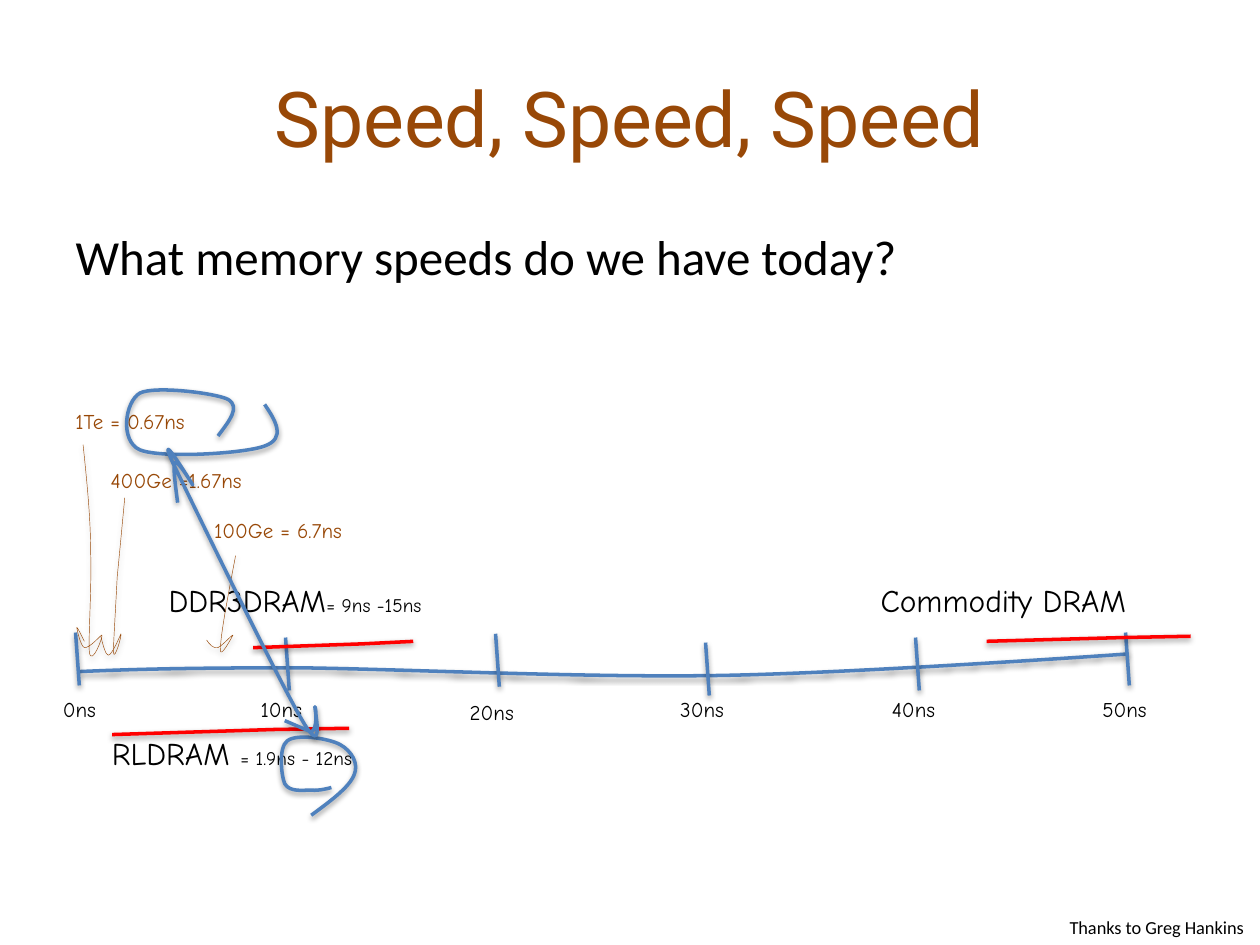
from dataclasses import dataclass

from lxml import etree
from pptx import Presentation
from pptx.dml.color import RGBColor
from pptx.enum.text import MSO_ANCHOR, MSO_AUTO_SIZE, PP_ALIGN
from pptx.oxml import parse_xml
from pptx.oxml.ns import nsdecls, qn
from pptx.util import Inches, Pt

CENTER = PP_ALIGN.CENTER
LEFT = PP_ALIGN.LEFT
MIDDLE = MSO_ANCHOR.MIDDLE
GROW = MSO_AUTO_SIZE.SHAPE_TO_FIT_TEXT
NO_FIT = MSO_AUTO_SIZE.NONE

CURVE_STEPS = 20
SHADOW = (
    f'<a:effectLst {nsdecls("a")}><a:outerShdw blurRad="40000" dist="20000" '
    'dir="5400000" rotWithShape="0"><a:srgbClr val="000000">'
    '<a:alpha val="38000"/></a:srgbClr></a:outerShdw></a:effectLst>'
)


@dataclass(frozen=True)
class Theme:
    ink: RGBColor = RGBColor.from_string("000000")
    brown: RGBColor = RGBColor.from_string("984807")
    blue: RGBColor = RGBColor.from_string("4F81BD")
    red: RGBColor = RGBColor.from_string("FF0000")
    title_font: str = "Roboto"
    body_font: str = "Calibri"
    sketch_font: str = "Comic Neue"
    title_size: float = 44
    body_size: float = 28
    memory_size: float = 18
    label_size: float = 12
    range_size: float = 11
    credit_size: float = 10.5
    stroke: float = 2
    hairline: float = 0.25


def segments(points):
    return [points[first:first + 3] for first in range(1, len(points), 3)]


def flatten(points):
    outline = [points[0]]
    for segment in segments(points):
        controls = (outline[-1], *segment)
        if len(segment) == 1:
            outline.append(segment[0])
            continue
        for step in range(1, CURVE_STEPS + 1):
            t = step / CURVE_STEPS
            weights = ((1 - t) ** 3, 3 * t * (1 - t) ** 2, 3 * t * t * (1 - t), t ** 3)
            outline.append(tuple(
                sum(weight * point[axis] for weight, point in zip(weights, controls))
                for axis in (0, 1)
            ))
    return outline


class SlideBuilder:
    def __init__(self, slide, theme):
        self.slide = slide
        self.theme = theme

    def format_font(self, font, name, size, color):
        for key, value in {"name": name, "size": Pt(size)}.items():
            setattr(font, key, value)
        font.color.rgb = color

    def place(self, box, left, top, width, height):
        bounds = {"left": left, "top": top, "width": width, "height": height}
        for key, value in bounds.items():
            setattr(box, key, Inches(value))

    def title(self, text, *bounds):
        box = self.slide.shapes.title
        self.place(box, *bounds)
        box.text_frame.vertical_anchor = MIDDLE
        para = box.text_frame.paragraphs[0]
        para.alignment = CENTER
        span = para.add_run()
        span.text = text
        self.format_font(span.font, self.theme.title_font, self.theme.title_size, self.theme.brown)

    def body(self, text, *bounds):
        box = self.slide.placeholders[1]
        self.place(box, *bounds)
        box.text_frame.auto_size = NO_FIT
        para = box.text_frame.paragraphs[0]
        para.alignment = LEFT
        para.space_before = Pt(0)
        properties = para._p.get_or_add_pPr()
        for key in ("marL", "indent"):
            properties.set(key, "0")
        etree.SubElement(properties, qn("a:buNone"))
        span = para.add_run()
        span.text = text
        self.format_font(span.font, self.theme.body_font, self.theme.body_size, self.theme.ink)

    def label(self, spans, left, top, width, height=0.3, color=None, font=None):
        box = self.slide.shapes.add_textbox(*map(Inches, (left, top, width, height)))
        for key, value in {"word_wrap": False, "auto_size": GROW}.items():
            setattr(box.text_frame, key, value)
        para = box.text_frame.paragraphs[0]
        for text, size in spans:
            span = para.add_run()
            span.text = text
            self.format_font(span.font, font or self.theme.sketch_font, size,
                             color or self.theme.ink)

    def stroke(self, points, color, width):
        corners = [(Inches(x), Inches(y)) for x, y in points]
        builder = self.slide.shapes.build_freeform(*corners[0])
        builder.add_line_segments(corners[1:], close=False)
        shape = builder.convert_to_shape()
        shape.fill.background()
        shape.line.color.rgb = color
        shape.line.width = Pt(width)
        shape._element.spPr.append(parse_xml(SHADOW))
        return shape

    def curve(self, points, color, width):
        shape = self.stroke(flatten(points), color, width)
        outline = next(shape._element.iter(qn("a:path")))
        for line in outline.findall(qn("a:lnTo")):
            outline.remove(line)
        for segment in segments(points):
            tag = "a:cubicBezTo" if len(segment) == 3 else "a:lnTo"
            command = etree.SubElement(outline, qn(tag))
            for x, y in segment:
                point = etree.SubElement(command, qn("a:pt"))
                point.set("x", str(Inches(x) - shape.left))
                point.set("y", str(Inches(y) - shape.top))


TICK_TOPS = (5.02, 5.06, 5.03, 5.1, 5.06, 5.02)
TICK_LABELS = (
    ("0ns", 0.4, 5.48, 0.51),
    ("10ns", 1.97, 5.48, 0.58),
    ("20ns", 3.63, 5.5, 0.64),
    ("30ns", 5.3, 5.48, 0.62),
    ("40ns", 6.98, 5.48, 0.61),
    ("50ns", 8.65, 5.48, 0.63),
)
MEMORY_LABELS = (
    ("Commodity DRAM", "", 6.89, 4.56, 2.6),
    ("DDR3DRAM", "= 9ns -15ns", 1.24, 4.56, 2.8),
    ("RLDRAM ", "= 1.9ns - 12ns", 0.79, 5.78, 2.69),
)
MEMORY_RANGES = (
    ((2.01, 5.14), (2.88, 5.11), (3.28, 5.09)),
    ((0.89, 5.83), (2.17, 5.79), (2.77, 5.78)),
    ((7.83, 5.09), (8.93, 5.06), (9.45, 5.05)),
)
LINK_LABELS = (
    ("100Ge = 6.7ns", 1.6, 4.06, 1.49),
    ("400Ge =1.67ns", 0.78, 3.66, 1.5),
    ("1Te = 0.67ns", 0.5, 3.19, 1.36),
)
TIME_AXIS = (
    (0.63, 5.33), (1.08, 5.31), (1.52, 5.3), (2.37, 5.3), (3.22, 5.31), (4.64, 5.38),
    (5.74, 5.36), (6.84, 5.34), (8.95, 5.19), (8.95, 5.19),
)
LINK_ARROWS = (
    ((0.66, 3.53), (0.69, 3.82), (0.72, 4.11), (0.72, 4.38), (0.73, 4.66), (0.7, 5.07),
     (0.71, 5.18), (0.73, 5.29), (0.82, 5.05), (0.81, 5.04), (0.81, 5.03), (0.71, 5.15),
     (0.67, 5.14), (0.64, 5.13), (0.61, 4.99), (0.61, 4.98), (0.61, 4.97), (0.64, 5.03),
     (0.67, 5.09)),
    ((0.99, 3.95), (0.97, 4.16), (0.95, 4.38), (0.93, 4.58), (0.92, 4.79), (0.9, 5.1),
     (0.9, 5.18), (0.91, 5.25), (0.97, 5.03), (0.96, 5.03), (0.96, 5.03), (0.89, 5.2),
     (0.86, 5.2), (0.84, 5.2), (0.82, 5.13), (0.8, 5.05)),
    ((1.87, 4.41), (1.81, 4.73), (1.75, 5.04), (1.75, 5.15), (1.74, 5.25), (1.85, 5.04),
     (1.85, 5.04), (1.84, 5.04), (1.76, 5.13), (1.73, 5.14), (1.69, 5.15), (1.66, 5.11),
     (1.64, 5.08)),
)
LINK_CIRCLE = (
    (1.73, 3.46), (1.82, 3.34), (1.91, 3.23), (1.81, 3.17), (1.71, 3.12), (1.23, 3.06),
    (1.11, 3.12), (0.99, 3.19), (0.95, 3.5), (1.11, 3.57), (1.28, 3.64), (1.94, 3.6),
    (2.1, 3.54), (2.27, 3.48), (2.19, 3.34), (2.1, 3.21),
)
MEMORY_CIRCLE = (
    (2.47, 6.47), (2.62, 6.36), (2.77, 6.25), (2.81, 6.15), (2.85, 6.06), (2.79, 5.96),
    (2.7, 5.91), (2.61, 5.86), (2.35, 5.82), (2.28, 5.88), (2.21, 5.93), (2.23, 6.15),
    (2.26, 6.22), (2.3, 6.29), (2.41, 6.27), (2.47, 6.27), (2.53, 6.28), (2.63, 6.25),
    (2.63, 6.25),
)
GAP_ARROW = (
    (1.41, 3.99), (1.39, 3.84), (1.37, 3.69), (1.39, 3.67), (1.41, 3.65), (1.53, 3.85),
    (1.53, 3.85), (1.53, 3.85), (1.23, 3.36), (1.37, 3.67), (1.52, 3.98), (2.21, 5.4),
    (2.4, 5.72), (2.59, 6.05), (2.49, 5.6), (2.5, 5.61), (2.51, 5.63), (2.52, 5.79),
    (2.47, 5.81), (2.26, 5.72),
)


def main():
    deck = Presentation()
    deck.slide_width, deck.slide_height = Inches(10), Inches(7.5)
    theme = Theme()
    page = SlideBuilder(deck.slides.add_slide(deck.slide_layouts[1]), theme)

    page.title("Speed, Speed, Speed", 0.5, 0.3, 9, 1.25)
    page.body("What memory speeds do we have today?", 0.5, 1.75, 9.5, 1.31)

    page.curve(TIME_AXIS, theme.blue, theme.stroke)
    for index, top in enumerate(TICK_TOPS):
        left = 0.6 + index * 5 / 3
        page.stroke(((left, top), (left + 0.03, top + 0.42)), theme.blue, theme.stroke)
    for text, *bounds in TICK_LABELS:
        page.label([(text, theme.label_size)], *bounds)

    for name, speed, *bounds in MEMORY_LABELS:
        spans = [(name, theme.memory_size)]
        if speed:
            spans.append((speed, theme.range_size))
        page.label(spans, *bounds, height=0.4)
    for points in MEMORY_RANGES:
        page.stroke(points, theme.red, theme.stroke)

    page.label([("Thanks to Greg Hankins", theme.credit_size)], 8.39, 7.22, 1.61, 0.28,
               font=theme.body_font)

    for text, *bounds in LINK_LABELS:
        page.label([(text, theme.label_size)], *bounds, color=theme.brown)
    for points in LINK_ARROWS:
        page.curve(points, theme.brown, theme.hairline)
    for points in (LINK_CIRCLE, MEMORY_CIRCLE, GAP_ARROW):
        page.curve(points, theme.blue, theme.stroke)

    deck.save("out.pptx")


if __name__ == "__main__":
    main()
